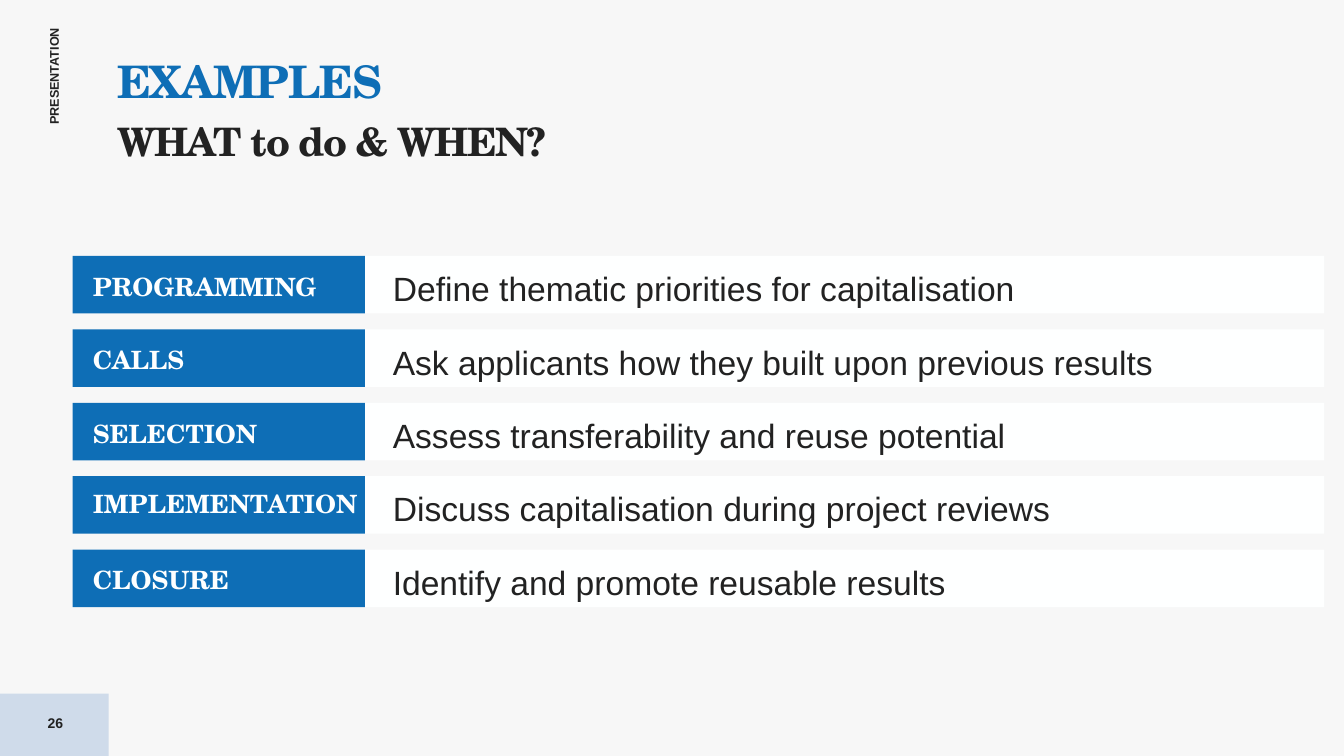
"""Build the slide that matches capitalisation actions to programme phases."""
from pptx import Presentation
from pptx.dml.color import RGBColor
from pptx.enum.shapes import MSO_SHAPE
from pptx.enum.text import MSO_ANCHOR, MSO_AUTO_SIZE, PP_ALIGN
from pptx.util import Cm, Pt

RECTANGLE = MSO_SHAPE.RECTANGLE
TOP, MIDDLE = MSO_ANCHOR.TOP, MSO_ANCHOR.MIDDLE
LEFT, CENTER = PP_ALIGN.LEFT, PP_ALIGN.CENTER
NO_AUTOFIT = MSO_AUTO_SIZE.NONE

SERIF, SANS = "TeX Gyre Schola", "Arial"
BLUE, PALE_BLUE = "0E6EB6", "CFDBEA"
INK, WHITE, BACKDROP = "222222", "FEFFFF", "F7F7F7"

ROW_TOP, ROW_PITCH, ROW_HEIGHT = 6.45, 1.85, 1.45
PHASES = [
    ("PROGRAMMING", "Define thematic priorities for capitalisation", 1.1),
    ("CALLS", "Ask applicants how they built upon previous results", 1.1),
    ("SELECTION", "Assess transferability and reuse potential", 1.1),
    ("IMPLEMENTATION", "Discuss capitalisation during project reviews", 0.9),
    ("CLOSURE", "Identify and promote reusable results", 1.1),
]


def paint(fill, color):
    fill.solid()
    fill.fore_color.rgb = RGBColor.from_string(color)


def write(shape, text, size, color=INK, font=SANS, bold=False, align=LEFT, anchor=MIDDLE,
          inset=(0, 0, 0, 0), line_spacing=1.0, space_after=0, tracking=0, wrap=True):
    frame = shape.text_frame
    frame.auto_size = NO_AUTOFIT
    frame.word_wrap = wrap
    frame.vertical_anchor = anchor
    frame.margin_left, frame.margin_top, frame.margin_right, frame.margin_bottom = map(Cm, inset)
    for index, line in enumerate(text.split("\n")):
        paragraph = frame.add_paragraph() if index else frame.paragraphs[0]
        paragraph.alignment = align
        paragraph.line_spacing = line_spacing
        paragraph.space_after = Pt(space_after)
        run = paragraph.add_run()
        run.text = line
        run.font.name, run.font.bold = font, bold
        run.font.size = Pt(size[index] if isinstance(size, tuple) else size)
        paint(run.font.fill, color[index] if isinstance(color, tuple) else color)
        if tracking:
            run.font._element.set("spc", str(tracking * 100))


prs = Presentation()
prs.slide_width, prs.slide_height = Cm(33.87), Cm(19.05)
slide = prs.slides.add_slide(prs.slide_layouts[5])
paint(slide.background.fill, BACKDROP)
shapes = slide.shapes

heading = shapes.title
heading.left, heading.top, heading.width, heading.height = Cm(2.95), Cm(1.42), Cm(29.82), Cm(3.2)
write(heading, "EXAMPLES\nWHAT to do & WHEN?", (32, 28), color=(BLUE, INK), font=SERIF,
      bold=True, anchor=TOP, line_spacing=0.97, space_after=8, tracking=-1)

side_label = shapes.add_textbox(Cm(0.1), Cm(1.7), Cm(2.51), Cm(0.38))
side_label.rotation = 270
write(side_label, "PRESENTATION", 9, bold=True, anchor=TOP, wrap=False)

bands = [(0, 17.48, 2.74, 1.57, PALE_BLUE)]
for row in range(len(PHASES)):
    top = ROW_TOP + row * ROW_PITCH
    bands.append((8.86, top, 24.51, ROW_HEIGHT, WHITE))
    bands.append((1.83, top, 7.37, ROW_HEIGHT, BLUE))

panels = []
for left, top, width, height, color in bands:
    panel = shapes.add_shape(RECTANGLE, Cm(left), Cm(top), Cm(width), Cm(height))
    panel.shadow.inherit = False
    panel.line.fill.background()
    paint(panel.fill, color)
    panels.append(panel)

for (phase, action, spacing), action_panel, phase_panel in zip(PHASES, panels[1::2], panels[2::2]):
    write(action_panel, action, 24, inset=(1.04, 0.18, 0.99, 0))
    write(phase_panel, phase, 18, color=WHITE, font=SERIF, bold=True,
          inset=(0.51, 0, 0, 0), line_spacing=spacing)

page_number = shapes.add_textbox(Cm(0), Cm(17.7), Cm(2.79), Cm(1.02))
write(page_number, "26", 10, bold=True, align=CENTER)

prs.save("out.pptx")
